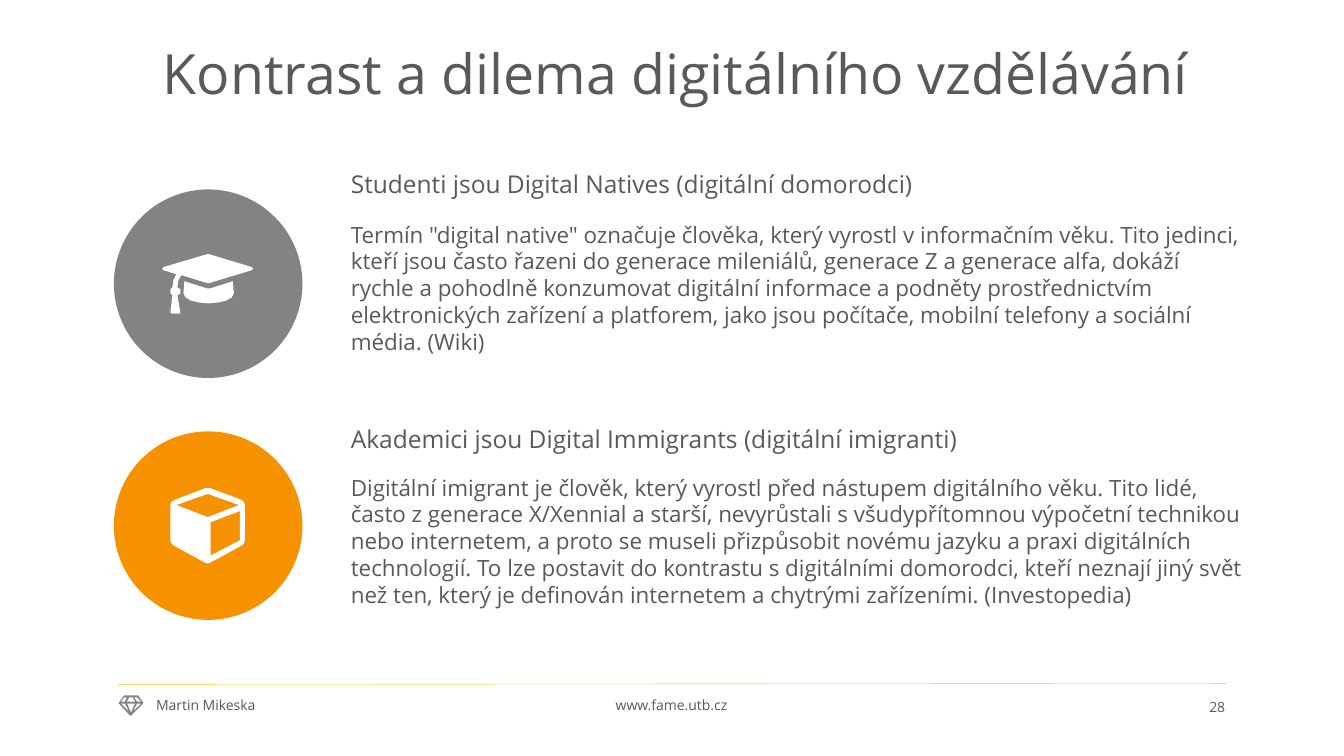
import pptx
import pptx.util
import pptx.dml.color
import pptx.enum.shapes
import pptx.enum.text
import pptx.oxml

Inches, Pt = pptx.util.Inches, pptx.util.Pt
RGB = pptx.dml.color.RGBColor.from_string
ALIGN, ANCHOR = pptx.enum.text.PP_ALIGN, pptx.enum.text.MSO_ANCHOR
COLORS = {"text": "595959", "gray": "838383", "orange": "F69200",
          "gold": "FEC306", "white": "FFFFFF"}

deck = pptx.Presentation()
deck.slide_width, deck.slide_height = Inches(13.33), Inches(7.5)
slide = deck.slides.add_slide(deck.slide_layouts[6])
shapes = slide.shapes


def write(text, left, top, width, height, size=10, align=ALIGN.LEFT,
          anchor=ANCHOR.TOP, space=1.0, inset=True):
    box = shapes.add_textbox(Inches(left), Inches(top), Inches(width), Inches(height))
    frame = box.text_frame
    frame.word_wrap = True
    frame.vertical_anchor = anchor
    if not inset:
        frame.margin_left = frame.margin_right = 0
        frame.margin_top = frame.margin_bottom = 0
    para = frame.paragraphs[0]
    para.alignment = align
    para.line_spacing = space
    run = para.add_run()
    run.text = text
    run.font.name = "Open Sans"
    run.font.size = Pt(size)
    run.font.color.rgb = RGB(COLORS["text"])


def draw(place, color, rings):
    """Draw closed rings, given in hundredths of an inch; inner rings are holes."""
    first, *rest = rings
    outline = place.build_freeform(*first[0], scale=Inches(0.01))
    outline.add_line_segments(first[1:], close=True)
    for ring in rest:
        outline.move_to(*ring[0])
        outline.add_line_segments(ring[1:], close=True)
    icon = outline.convert_to_shape()
    icon.shadow.inherit = False
    icon.fill.solid()
    icon.fill.fore_color.rgb = RGB(COLORS[color])
    icon.line.fill.background()


# Footer
rule = shapes.add_connector(pptx.enum.shapes.MSO_CONNECTOR.STRAIGHT,
                            Inches(1.17), Inches(6.79), Inches(12.16), Inches(6.78))
rule.line.color.rgb = RGB(COLORS["gold"])
rule.line.width = Pt(0.25)
rule._element.spPr.append(pptx.oxml.parse_xml(
    '<a:effectLst xmlns:a="http://schemas.openxmlformats.org/drawingml/2006/main"/>'))
draw(shapes, "gray", [
    [(123, 690), (137, 690), (142, 697), (142, 698), (130, 710), (129, 710),
     (118, 698), (118, 697)],
    [(136, 696), (133, 692), (136, 692), (140, 696)],
    [(132, 706), (136, 698), (140, 698)],
    [(130, 707), (126, 698), (134, 698)],
    [(120, 698), (124, 698), (128, 706)],
    [(123, 692), (126, 692), (124, 696), (120, 696)],
    [(132, 692), (134, 696), (126, 696), (128, 692)]])
write("Martin Mikeska", 1.45, 6.88, 2.16, 0.26, space=0.9)
write("www.fame.utb.cz", 5.58, 6.88, 2.16, 0.26, align=ALIGN.CENTER, space=0.9)
write("28", 10.96, 6.89, 1.29, 0.25, align=ALIGN.RIGHT, anchor=ANCHOR.MIDDLE)

# Title
write("Kontrast a dilema digitálního vzdělávání", 0.85, 0.39, 11.71, 0.74,
      size=39.6, align=ALIGN.CENTER, anchor=ANCHOR.MIDDLE, space=0.9)

# Headings and body text
write("Studenti jsou Digital Natives (digitální domorodci)", 3.48, 1.62, 5.69, 0.45,
      size=17.5, anchor=ANCHOR.MIDDLE, space=0.9, inset=False)
write("Akademici jsou Digital Immigrants (digitální imigranti)", 3.48, 4.16, 6.85, 0.33,
      size=17.5, anchor=ANCHOR.MIDDLE, space=1.2, inset=False)
BODIES = [
    (2.19, 1.56, 'Termín "digital native" označuje člověka, který vyrostl v informačním '
     "věku. Tito jedinci, kteří jsou často řazeni do generace mileniálů, generace Z a "
     "generace alfa, dokáží rychle a pohodlně konzumovat digitální informace a podněty "
     "prostřednictvím elektronických zařízení a platforem, jako jsou počítače, mobilní "
     "telefony a sociální média. (Wiki)"),
    (4.7, 1.87, "Digitální imigrant je člověk, který vyrostl před nástupem digitálního "
     "věku. Tito lidé, často z generace X/Xennial a starší, nevyrůstali s všudypřítomnou "
     "výpočetní technikou nebo internetem, a proto se museli přizpůsobit novému jazyku a "
     "praxi digitálních technologií. To lze postavit do kontrastu s digitálními domorodci, "
     "kteří neznají jiný svět než ten, který je definován internetem a chytrými "
     "zařízeními. (Investopedia)")]
for top, height, text in BODIES:
    write(text, 3.48, top, 8.88, height, size=16, inset=False)

# Discs with their icons
CAP = [
    [(206, 252), (162, 265), (161, 267), (162, 268), (175, 272), (172, 278),
     (171, 285), (169, 287), (169, 291), (171, 293), (169, 310), (170, 311),
     (178, 311), (179, 310), (176, 293), (179, 291), (179, 287), (176, 285),
     (177, 278), (180, 273), (206, 281), (207, 281), (250, 268), (251, 267),
     (250, 265), (207, 252)],
    [(183, 279), (182, 291), (184, 295), (189, 298), (197, 300), (207, 301),
     (217, 300), (225, 298), (230, 295), (232, 291), (231, 279), (209, 286),
     (205, 286)]]
CUBE = [
    [(169, 501), (170, 498), (173, 496), (204, 484), (208, 484), (240, 496),
     (242, 498), (243, 501), (243, 536), (242, 539), (240, 541), (209, 558),
     (206, 559), (203, 558), (172, 541), (170, 539), (169, 536)],
    [(206, 490), (237, 501), (206, 513), (175, 501)],
    [(238, 536), (209, 551), (209, 518), (238, 507)]]
for top, color, rings in ((1.88, "gray", CAP), (4.28, "orange", CUBE)):
    group = shapes.add_group_shape()
    disc = group.shapes.add_shape(pptx.enum.shapes.MSO_SHAPE.OVAL,
                                  Inches(1.13), Inches(top), Inches(1.87), Inches(1.87))
    disc.shadow.inherit = False
    disc.fill.solid()
    disc.fill.fore_color.rgb = RGB(COLORS[color])
    disc.line.fill.background()
    draw(group.shapes, "white", rings)

deck.save("out.pptx")
